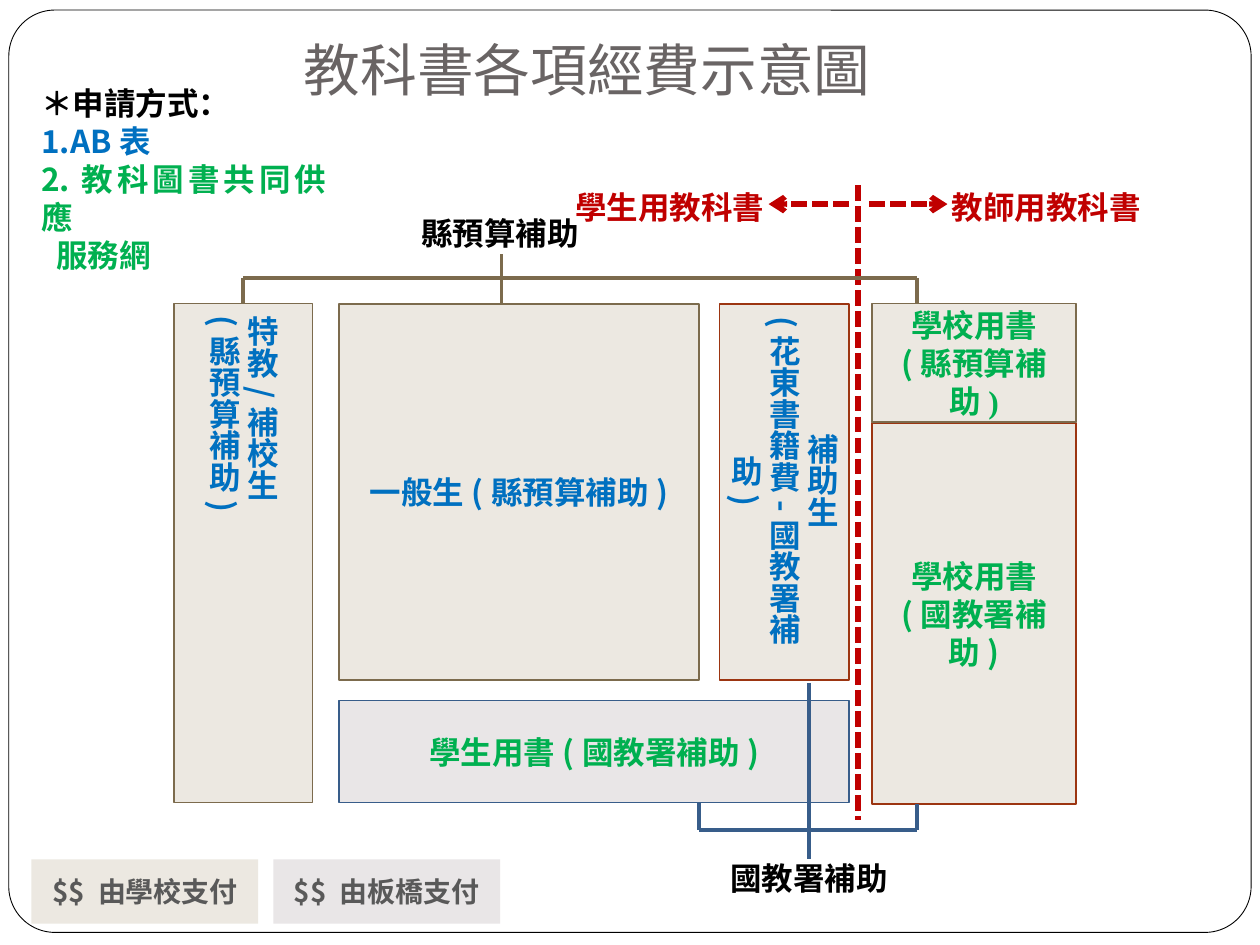
from lxml.etree import SubElement
from pptx import Presentation
from pptx.dml.color import RGBColor
from pptx.enum.dml import MSO_LINE_DASH_STYLE as Dash
from pptx.enum.shapes import MSO_CONNECTOR as Connector, MSO_SHAPE as Shape
from pptx.enum.text import MSO_ANCHOR as Anchor, MSO_AUTO_SIZE as AutoSize, PP_ALIGN as Align
from pptx.oxml.ns import qn
from pptx.util import Inches, Pt

SANS_SC, SANS_TC, SERIF = "Noto Sans CJK SC", "Noto Sans CJK TC", "Times New Roman"
BEIGE, GREY = "ECE8E1", "E9E6E7"
BROWN, RUST, NAVY = "7C6B4D", "9C3511", "385D8A"
BLUE, GREEN, RED, BLACK = "0070C0", "00B050", "C00000", "000000"


def color(hex_code):
    return RGBColor.from_string(hex_code)


def add_run(para, text, hex_code, size=18, font=SANS_SC, bold=True):
    span = para.add_run()
    span.text = text
    span.font.size = Pt(size)
    span.font.bold = bold
    span.font.color.rgb = color(hex_code)
    span.font.name = font
    SubElement(span.font._element, qn("a:ea"), typeface=font)


def write_lines(frame, lines, align=Align.CENTER, size=18, font=SANS_SC):
    """Write one paragraph for each (text, colour) pair."""
    frame.word_wrap = True
    frame.vertical_anchor = Anchor.MIDDLE
    for index, (text, hex_code) in enumerate(lines):
        para = frame.add_paragraph() if index else frame.paragraphs[0]
        para.alignment = align
        if text:
            add_run(para, text, hex_code, size, font)


def add_box(slide, place, fill, outline=None, kind=Shape.RECTANGLE, width=1):
    box = slide.shapes.add_shape(kind, *map(Inches, place))
    box.shadow.inherit = False
    box.fill.solid()
    box.fill.fore_color.rgb = color(fill)
    if outline:
        box.line.color.rgb = color(outline)
        box.line.width = Pt(width)
    else:
        box.line.fill.background()
    return box


def add_fund_box(slide, place, fill, outline, texts, hex_code,
                 vertical=False, align=Align.CENTER):
    box = add_box(slide, place, fill, outline)
    write_lines(box.text_frame, [(text, hex_code) for text in texts], align)
    if vertical:
        box.text_frame._txBody.bodyPr.set("vert", "eaVert")
    return box


def add_label(slide, place, lines, align=Align.CENTER):
    label = slide.shapes.add_textbox(*map(Inches, place))
    write_lines(label.text_frame, lines, align)
    return label


def add_line(slide, start, end, hex_code, width=2.25, dashed=False, arrow=False):
    line = slide.shapes.add_connector(Connector.STRAIGHT, *map(Inches, start + end))
    line.line.color.rgb = color(hex_code)
    line.line.width = Pt(width)
    if dashed:
        line.line.dash_style = Dash.SQUARE_DOT
    if arrow:
        SubElement(line.line._get_or_add_ln(), qn("a:tailEnd"), type="arrow")
    SubElement(line._element.spPr, qn("a:effectLst"))
    return line


def add_title(slide, text):
    title = slide.shapes.title
    title.left, title.top, title.width, title.height = map(Inches, (2.31, 0.23, 5.21, 0.69))
    frame = title.text_frame
    frame.auto_size = AutoSize.NONE
    frame.vertical_anchor = Anchor.BOTTOM
    frame.margin_bottom = Inches(0.1)
    frame.paragraphs[0].alignment = Align.LEFT
    add_run(frame.paragraphs[0], text, "696464", 32.4, bold=False)


def main():
    deck = Presentation()
    deck.slide_width, deck.slide_height = Inches(10), Inches(7.5)
    page = deck.slides.add_slide(deck.slide_layouts[5])

    # Rounded page frame, kept behind the title
    frame = add_box(page, (0.07, 0.08, 9.86, 7.32), "FFFFFF", BLACK, Shape.ROUNDED_RECTANGLE, 0.5)
    frame.adjustments[0] = 0.05
    page.shapes.title._element.addprevious(frame._element)
    add_title(page, "教科書各項經費示意圖")

    # Funding boxes
    add_fund_box(page, (2.69, 2.41, 2.86, 2.99), BEIGE, BROWN, ["一般生(縣預算補助)"], BLUE)
    add_fund_box(page, (6.92, 3.36, 1.62, 3.02), BEIGE, RUST, ["學校用書", "(國教署補助)"], GREEN)
    special = add_fund_box(page, (1.38, 2.41, 1.1, 3.96), BEIGE, BROWN,
                           ["特教/補校生", "(縣預算補助)"], BLUE, True, Align.LEFT)
    add_fund_box(page, (2.69, 5.56, 4.05, 0.81), GREY, NAVY, ["學生用書(國教署補助)"], GREEN)
    add_fund_box(page, (5.71, 2.41, 1.03, 2.99), BEIGE, RUST,
                 ["補助生", "(花東書籍費-國教署補助)"], BLUE, True)
    school = add_fund_box(page, (6.92, 2.41, 1.62, 0.94), BEIGE, BROWN,
                          ["學校用書", "(縣預算補助"], GREEN)
    add_run(school.text_frame.paragraphs[1], ")", GREEN, font=SERIF)

    # Divider between student and teacher textbooks
    add_line(page, (6.81, 1.47), (6.81, 6.51), RED, 3, dashed=True)
    for start, end, left, text in ((6.74, 6.1, 4.45, "學生用教科書"),
                                   (6.9, 7.52, 7.44, "教師用教科書")):
        add_line(page, (start, 1.62), (end, 1.62), RED, 3, dashed=True, arrow=True)
        add_label(page, (left, 1.47, 1.73, 0.35), [(text, RED)])

    # Legend of payers
    for left, fill, text in ((0.25, BEIGE, "$$ 由學校支付"), (2.17, GREY, "$$ 由板橋支付")):
        legend = add_box(page, (left, 6.82, 1.8, 0.51), fill)
        write_lines(legend.text_frame, [(text, "595959")], size=16, font=SANS_TC)

    # County budget bracket
    add_line(page, (3.98, 2.02), (3.98, 2.41), BROWN)
    add_line(page, (7.28, 2.21), (1.93, 2.21), BROWN)
    add_line(page, (7.28, 2.21), (7.28, 2.41), BROWN)
    add_line(page, (1.93, 2.21), (1.93, 2.41), BROWN).end_connect(special, 0)
    add_label(page, (3.07, 1.59, 1.8, 0.51), [("縣預算補助", BLACK)])

    # National agency bracket
    for x, top, bottom in ((5.55, 6.37, 6.59), (7.28, 6.38, 6.59), (6.42, 5.42, 6.82)):
        add_line(page, (x, top), (x, bottom), NAVY)
    add_line(page, (5.55, 6.59), (7.28, 6.59), NAVY)
    add_label(page, (5.52, 6.71, 1.8, 0.51), [("國教署補助", BLACK)])

    # Ways to apply
    ways = add_label(page, (0.23, 0.82, 2.46, 1.2),
                     [("＊申請方式：", BLACK), ("1.AB表", BLUE),
                      ("2.教科圖書共同供應", GREEN), ("服務網", GREEN)], Align.JUSTIFY)
    ways.text_frame.paragraphs[-1]._p.get_or_add_pPr().set("marL", str(Inches(0.12)))

    deck.save("out.pptx")


if __name__ == "__main__":
    main()
